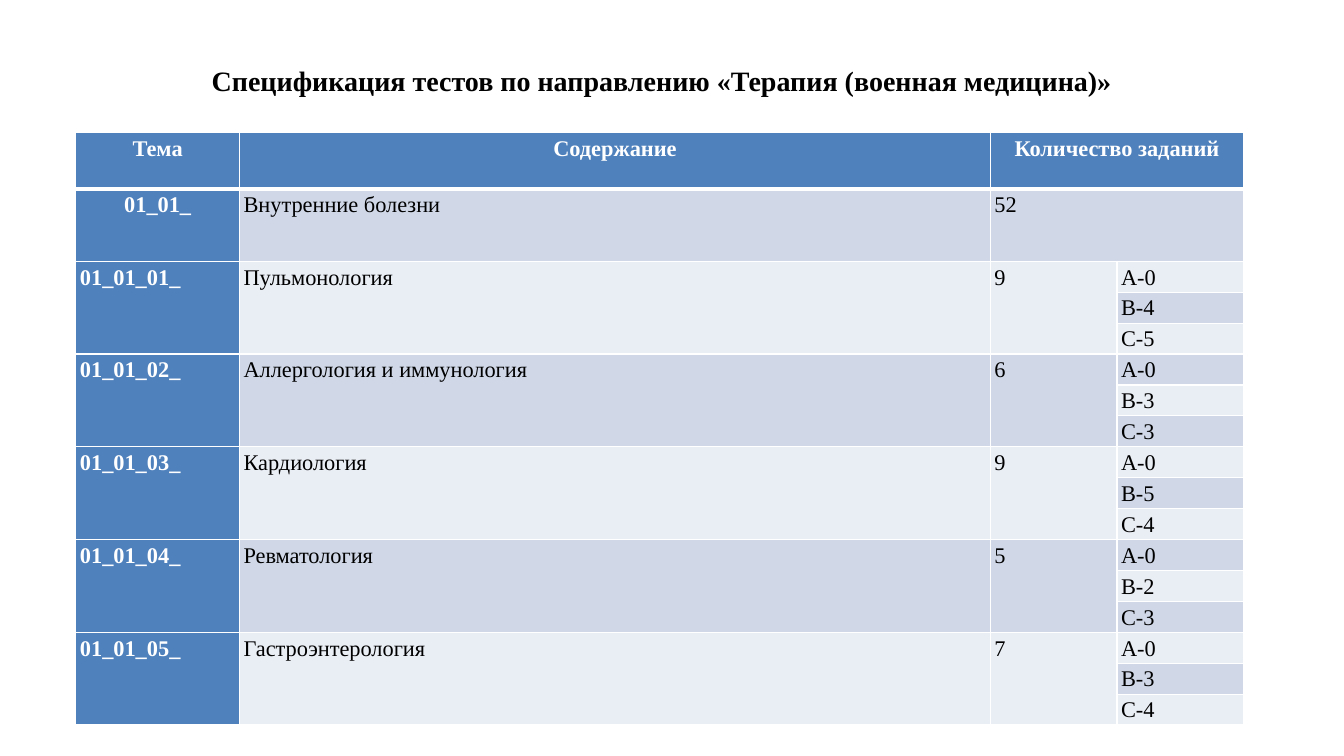
"""Build the slide with the test specification table."""
import pptx
import pptx.dml.color
import pptx.enum.text
import pptx.oxml
import pptx.oxml.ns
import pptx.util

Pt = pptx.util.Pt
ALIGN = pptx.enum.text.PP_ALIGN
FONT = "Times New Roman"
WHITE, BLACK, BLUE = "FFFFFF", "000000", "4F81BD"
BANDS = ("E9EDF4", "D0D8E8")
WIDTHS = (116.9, 536.4, 90.4, 90.4)
TOPICS = (
    ("01_01_01_", "Пульмонология", 9, ("А-0", "В-4", "С-5")),
    ("01_01_02_", "Аллергология и иммунология", 6, ("А-0", "В-3", "С-3")),
    ("01_01_03_", "Кардиология", 9, ("А-0", "В-5", "С-4")),
    ("01_01_04_", "Ревматология", 5, ("А-0", "В-2", "С-3")),
    ("01_01_05_", "Гастроэнтерология", 7, ("А-0", "В-3", "С-4")),
)


def tint(code):
    return pptx.dml.color.RGBColor.from_string(code)


def style(para, size, color, bold, align):
    para.alignment = align
    font = para.font
    font.name, font.size, font.bold = FONT, Pt(size), bold
    font.color.rgb = tint(color)


def add_title(slide, text):
    title = slide.shapes.title
    title.left, title.top = Pt(144), Pt(41.8)
    title.width, title.height = Pt(763.9), Pt(53.3)
    frame = title.text_frame
    frame.text = text
    frame.word_wrap = True
    frame.auto_size = pptx.enum.text.MSO_AUTO_SIZE.SHAPE_TO_FIT_TEXT
    frame.vertical_anchor = pptx.enum.text.MSO_ANCHOR.TOP
    para = frame.paragraphs[0]
    para.line_spacing = 1.0
    style(para, 20, BLACK, True, ALIGN.LEFT)


def add_edge(cell, side, width):
    space = pptx.oxml.ns.nsdecls("a")
    line = pptx.oxml.parse_xml(
        f'<a:ln{side} {space} w="{Pt(width)}"><a:solidFill>'
        f'<a:srgbClr val="{WHITE}"/></a:solidFill></a:ln{side}>')
    cell._tc.get_or_add_tcPr().append(line)


def format_cell(cell, row, col):
    head = row == 0
    lead = head or col == 0
    widths = {"L": 1, "R": 1, "T": 3 if row == 1 else 1, "B": 3 if head else 1}
    for side, width in widths.items():
        add_edge(cell, side, width)
    cell.fill.solid()
    cell.fill.fore_color.rgb = tint(BLUE if lead else BANDS[row % 2])
    cell.margin_left = cell.margin_right = Pt(2.9)
    cell.margin_top = cell.margin_bottom = Pt(0)
    para = cell.text_frame.paragraphs[0]
    para.line_spacing = 1.15
    if head:
        para.space_after = Pt(10)
    center = head or (row, col) == (1, 0)
    style(para, 16, WHITE if lead else BLACK, lead,
          ALIGN.CENTER if center else ALIGN.LEFT)


def fill_row(table, row, texts):
    for col, text in enumerate(texts):
        table.cell(row, col).text = str(text)


def add_table(slide):
    heights = [40.3, 51.8] + [20.2] * sum(len(topic[3]) for topic in TOPICS)
    table = slide.shapes.add_table(
        len(heights), len(WIDTHS), Pt(54.2), Pt(94.6),
        Pt(sum(WIDTHS)), Pt(sum(heights))).table
    table.first_col = True
    for col, width in enumerate(WIDTHS):
        table.columns[col].width = Pt(width)
    for row, height in enumerate(heights):
        table.rows[row].height = Pt(height)

    fill_row(table, 0, ("Тема", "Содержание", "Количество заданий"))
    fill_row(table, 1, ("01_01_", "Внутренние болезни", 52))
    for row in range(2):
        table.cell(row, 2).merge(table.cell(row, 3))
    row = 2
    for code, name, total, levels in TOPICS:
        fill_row(table, row, (code, name, total))
        last = row + len(levels) - 1
        for col in range(3):
            table.cell(row, col).merge(table.cell(last, col))
        for step, level in enumerate(levels):
            table.cell(row + step, 3).text = level
        row = last + 1

    for row in range(len(heights)):
        for col in range(len(WIDTHS)):
            format_cell(table.cell(row, col), row, col)


def main():
    deck = pptx.Presentation()
    deck.slide_width, deck.slide_height = Pt(960), Pt(540)
    slide = deck.slides.add_slide(deck.slide_layouts[5])
    add_title(slide, "Спецификация тестов по направлению "
                     "«Терапия (военная медицина)»")
    add_table(slide)
    deck.save("out.pptx")


if __name__ == "__main__":
    main()
